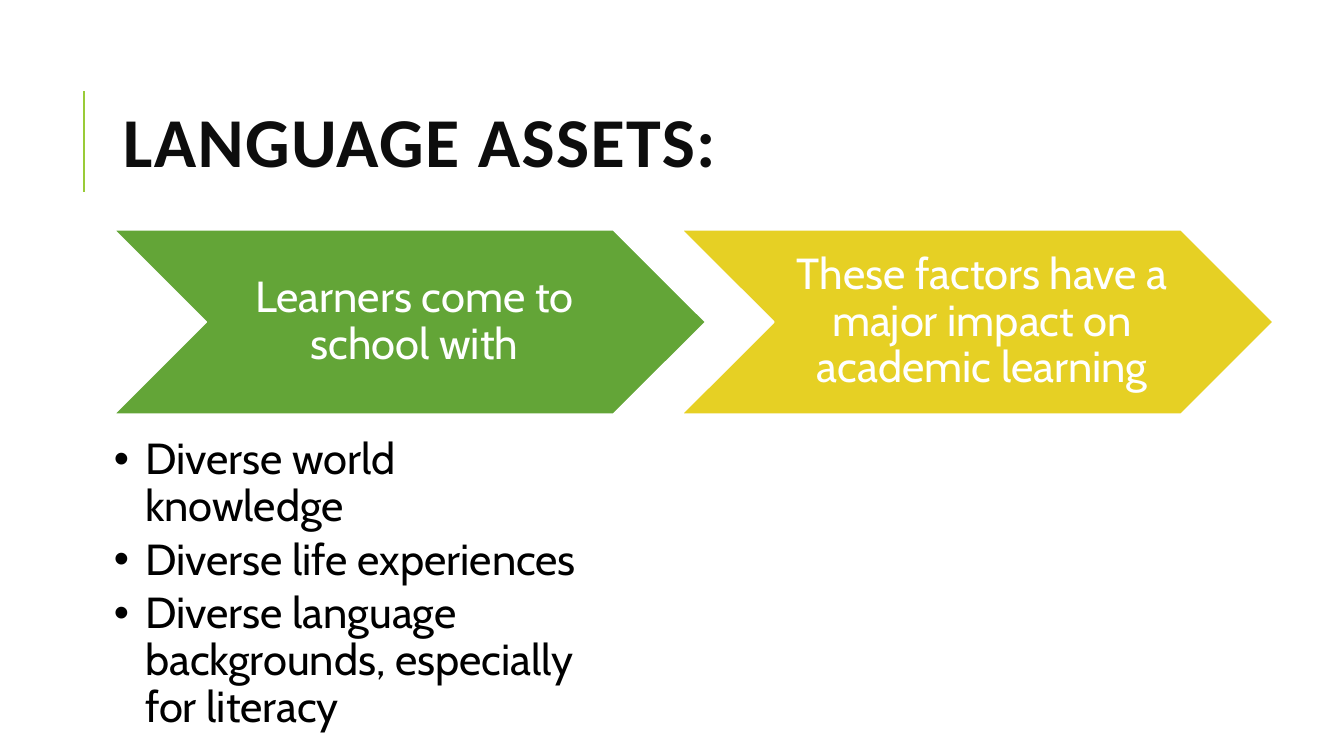
from lxml import etree
from pptx import Presentation
from pptx.dml.color import RGBColor
from pptx.enum.shapes import MSO_CONNECTOR, MSO_SHAPE
from pptx.enum.text import MSO_ANCHOR, PP_ALIGN
from pptx.oxml.ns import qn
from pptx.util import Pt

STRAIGHT = MSO_CONNECTOR.STRAIGHT
CHEVRON = MSO_SHAPE.CHEVRON
TOP = MSO_ANCHOR.TOP
MIDDLE = MSO_ANCHOR.MIDDLE
LEFT = PP_ALIGN.LEFT
CENTER = PP_ALIGN.CENTER

EMU_PER_PX = 9144
BLANK_LAYOUT = 6

WHITE = RGBColor(0xFF, 0xFF, 0xFF)
BLACK = RGBColor(0x00, 0x00, 0x00)
NEAR_BLACK = RGBColor(0x0D, 0x0D, 0x0D)
LIME = RGBColor(0x99, 0xCB, 0x38)
GREEN = RGBColor(0x63, 0xA5, 0x37)
YELLOW = RGBColor(0xE6, 0xD0, 0x24)

TITLE_FONT = {"name": "Calibri", "size": Pt(50), "bold": True}
BODY_FONT = {"name": "Cabin", "size": Pt(31)}
TITLE_PARAGRAPH = {"alignment": LEFT, "line_spacing": 0.8}
CHEVRON_PARAGRAPH = {"alignment": CENTER, "line_spacing": 0.9}
BULLET_PARAGRAPH = {"alignment": LEFT, "line_spacing": 0.9, "space_after": Pt(4.65)}

CHEVRON_LEFT, CHEVRON_TOP = 113, 228
CHEVRON_WIDTH, CHEVRON_HEIGHT = 587, 183
CHEVRON_STEP = 563
BULLET_INDENT = 31

STEPS = [
    ("Learners come to school with", GREEN),
    ("These factors have a major impact on academic learning", YELLOW),
]
ASSETS = [
    "Diverse world knowledge",
    "Diverse life experiences",
    "Diverse language backgrounds, especially for literacy",
]


def px(length):
    return length * EMU_PER_PX


def apply_format(target, values):
    for name, value in values.items():
        setattr(target, name, value)


def set_frame(shape, anchor, margins):
    sides = ("margin_left", "margin_top", "margin_right", "margin_bottom")
    values = dict(zip(sides, map(px, margins)))
    apply_format(shape.text_frame, {"word_wrap": True, "vertical_anchor": anchor, **values})


def write_paragraph(paragraph, text, paragraph_format, font_format, color):
    apply_format(paragraph, paragraph_format)
    run = paragraph.add_run()
    run.text = text
    apply_format(run.font, font_format)
    run.font.color.rgb = color
    return run


def add_accent_line(slide, x, top, bottom):
    line = slide.shapes.add_connector(STRAIGHT, px(x), px(bottom), px(x), px(top))
    line.line.color.rgb = LIME
    line.line.width = Pt(1.5)
    etree.SubElement(line._element.spPr, qn("a:effectLst"))


def add_title(slide, text, box):
    title = slide.shapes.add_textbox(*map(px, box))
    set_frame(title, MIDDLE, (10, 5, 10, 5))
    run = write_paragraph(
        title.text_frame.paragraphs[0], text, TITLE_PARAGRAPH, TITLE_FONT, NEAR_BLACK
    )
    run.font._element.set("spc", "100")


def add_chevron(slide, text, fill_color, left):
    box = (left, CHEVRON_TOP, CHEVRON_WIDTH, CHEVRON_HEIGHT)
    chevron = slide.shapes.add_shape(CHEVRON, *map(px, box))
    chevron.shadow.inherit = False
    chevron.fill.solid()
    chevron.fill.fore_color.rgb = fill_color
    chevron.line.color.rgb = WHITE
    chevron.line.width = Pt(1.25)
    set_frame(chevron, MIDDLE, (14, 5, 5, 5))
    write_paragraph(
        chevron.text_frame.paragraphs[0], text, CHEVRON_PARAGRAPH, BODY_FONT, WHITE
    )


def add_bullet(paragraph):
    properties = paragraph._p.get_or_add_pPr()
    properties.set("marL", str(px(BULLET_INDENT)))
    properties.set("indent", str(-px(BULLET_INDENT)))
    etree.SubElement(properties, qn("a:buFont"), typeface="Arial")
    etree.SubElement(properties, qn("a:buChar"), char="•")


def add_bullet_list(slide, items, box):
    bullet_list = slide.shapes.add_textbox(*map(px, box))
    set_frame(bullet_list, TOP, (0, 0, 0, 0))
    frame = bullet_list.text_frame
    for index, item in enumerate(items):
        paragraph = frame.add_paragraph() if index else frame.paragraphs[0]
        write_paragraph(paragraph, item, BULLET_PARAGRAPH, BODY_FONT, BLACK)
        add_bullet(paragraph)


def main():
    presentation = Presentation()
    apply_format(presentation, {"slide_width": px(1333), "slide_height": px(750)})
    slide = presentation.slides.add_slide(presentation.slide_layouts[BLANK_LAYOUT])
    add_accent_line(slide, 83, 90, 190)
    add_title(slide, "LANGUAGE ASSETS:", (112, 64, 1063, 164))
    for index, (text, fill_color) in enumerate(STEPS):
        add_chevron(slide, text, fill_color, CHEVRON_LEFT + index * CHEVRON_STEP)
    add_bullet_list(slide, ASSETS, (CHEVRON_LEFT, 434, 469, 229))
    presentation.save("out.pptx")


if __name__ == "__main__":
    main()
